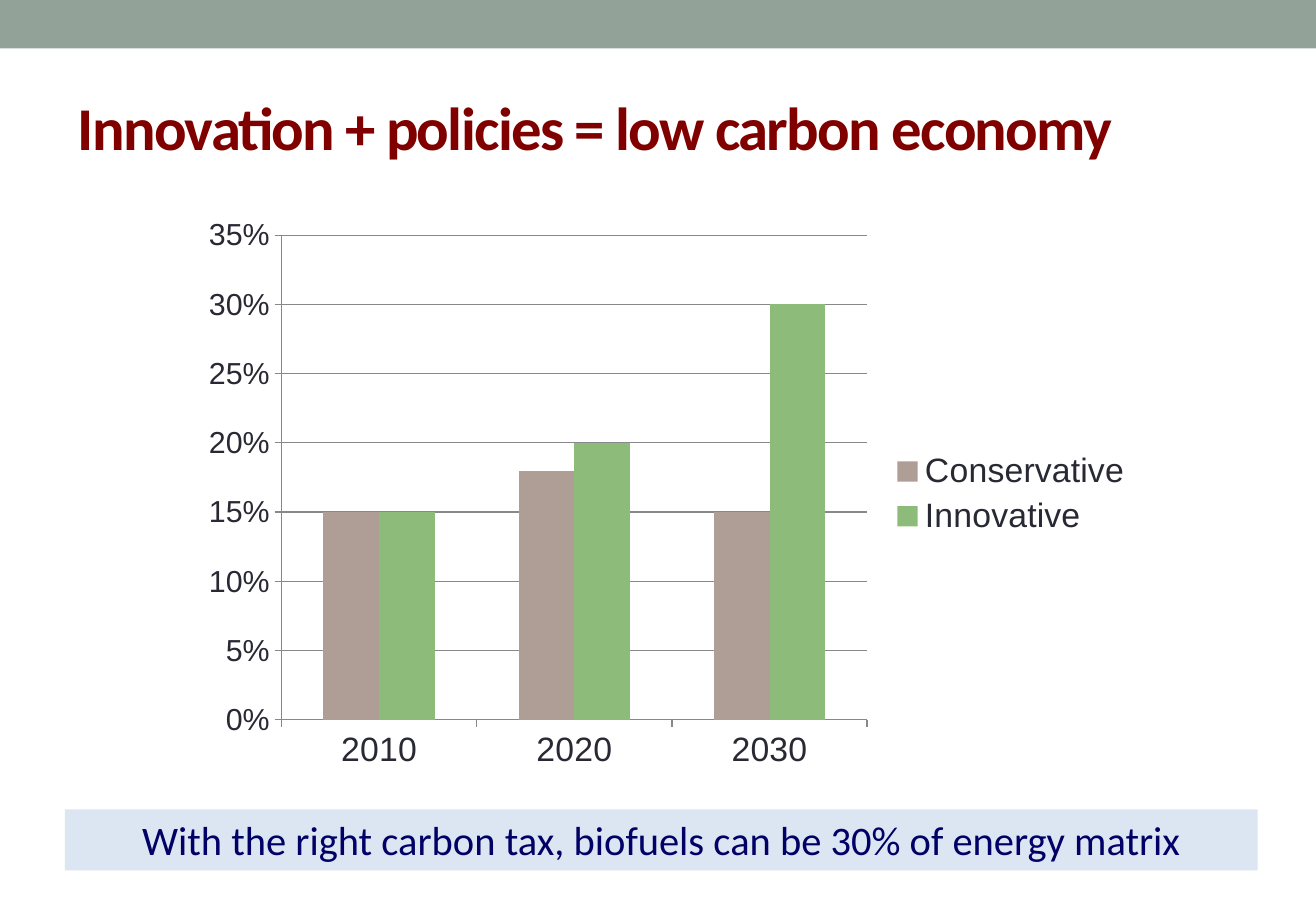
"""Build a slide comparing conservative and innovative biofuel shares."""
from pptx import Presentation
from pptx.chart.data import CategoryChartData
from pptx.dml.color import RGBColor
from pptx.enum.chart import XL_CHART_TYPE as ChartType, XL_LEGEND_POSITION as LegendPosition
from pptx.enum.chart import XL_TICK_MARK as TickMark
from pptx.enum.shapes import MSO_SHAPE as Shape
from pptx.enum.text import MSO_ANCHOR as Anchor, PP_ALIGN as Align
from pptx.util import Pt

COLORS = {
    "band": "93A299", "title": "800000", "chart text": "292934", "grid": "888888",
    "Conservative": "AF9E95", "Innovative": "8DBC7A",
    "message fill": "DCE6F2", "message text": "000066",
}
SHARES = {"Conservative": (0.15, 0.18, 0.15), "Innovative": (0.15, 0.2, 0.3)}


def color(name):
    return RGBColor.from_string(COLORS[name])


def add_bar(left, top, width, height, fill):
    bar = page.shapes.add_shape(Shape.RECTANGLE, Pt(left), Pt(top), Pt(width), Pt(height))
    bar.shadow.inherit = False
    bar.fill.solid()
    bar.fill.fore_color.rgb = color(fill)
    bar.line.fill.background()
    return bar


deck = Presentation()
deck.slide_width, deck.slide_height = Pt(780), Pt(540)
page = deck.slides.add_slide(deck.slide_layouts[6])

add_bar(0, 0, 780, 28.8, "band")

title = page.shapes.add_textbox(Pt(39), Pt(42), Pt(702), Pt(65.5))
title.text_frame.word_wrap = True
title.text_frame.vertical_anchor = Anchor.MIDDLE
title.text_frame.text = "Innovation + policies = low carbon economy"
span = title.text_frame.paragraphs[0].runs[0]
span.font.name, span.font.size, span.font.bold = "Calibri", Pt(36), True
span.font.color.rgb = color("title")
span.font._element.set("spc", "-100")

data = CategoryChartData(number_format="0%")
data.categories = ["2010", "2020", "2030"]
for name, values in SHARES.items():
    data.add_series(name, values)
chart = page.shapes.add_chart(
    ChartType.COLUMN_CLUSTERED, Pt(112.5), Pt(122.5), Pt(566.5), Pt(340.5), data
).chart
chart.has_title = False
chart.font.name, chart.font.size = "Arial", Pt(10)
chart.font.color.rgb = color("chart text")

plot = chart.plots[0]
plot.gap_width, plot.overlap, plot.vary_by_categories = 150, 0, False
for series in plot.series:
    series.format.fill.solid()
    series.format.fill.fore_color.rgb = color(series.name)

shares_axis = chart.value_axis
shares_axis.minimum_scale, shares_axis.maximum_scale, shares_axis.major_unit = 0, 0.35, 0.05
shares_axis.tick_labels.number_format = "0%"
shares_axis.tick_labels.number_format_is_linked = False
shares_axis.has_major_gridlines = True
chart.has_legend = True
chart.legend.position = LegendPosition.RIGHT
chart.legend.include_in_layout = False

for axis in (chart.category_axis, shares_axis):
    axis.major_tick_mark = TickMark.OUTSIDE
for line in (chart.category_axis.format.line, shares_axis.format.line,
             shares_axis.major_gridlines.format.line):
    line.color.rgb = color("grid")
    line.width = Pt(0.75)
for font, size in ((chart.category_axis.tick_labels.font, 20),
                   (shares_axis.tick_labels.font, 18), (chart.legend.font, 20)):
    font.name, font.size = "Arial", Pt(size)
    font.color.rgb = color("chart text")

message = add_bar(38.5, 479.8, 707, 36.2, "message fill")
message.text_frame.word_wrap = True
message.text_frame.vertical_anchor = Anchor.TOP
message.text_frame.text = "With the right carbon tax, biofuels can be 30% of energy matrix"
para = message.text_frame.paragraphs[0]
para.alignment = Align.CENTER
span = para.runs[0]
span.font.name, span.font.size = "Calibri", Pt(24)
span.font.color.rgb = color("message text")

deck.save("out.pptx")
